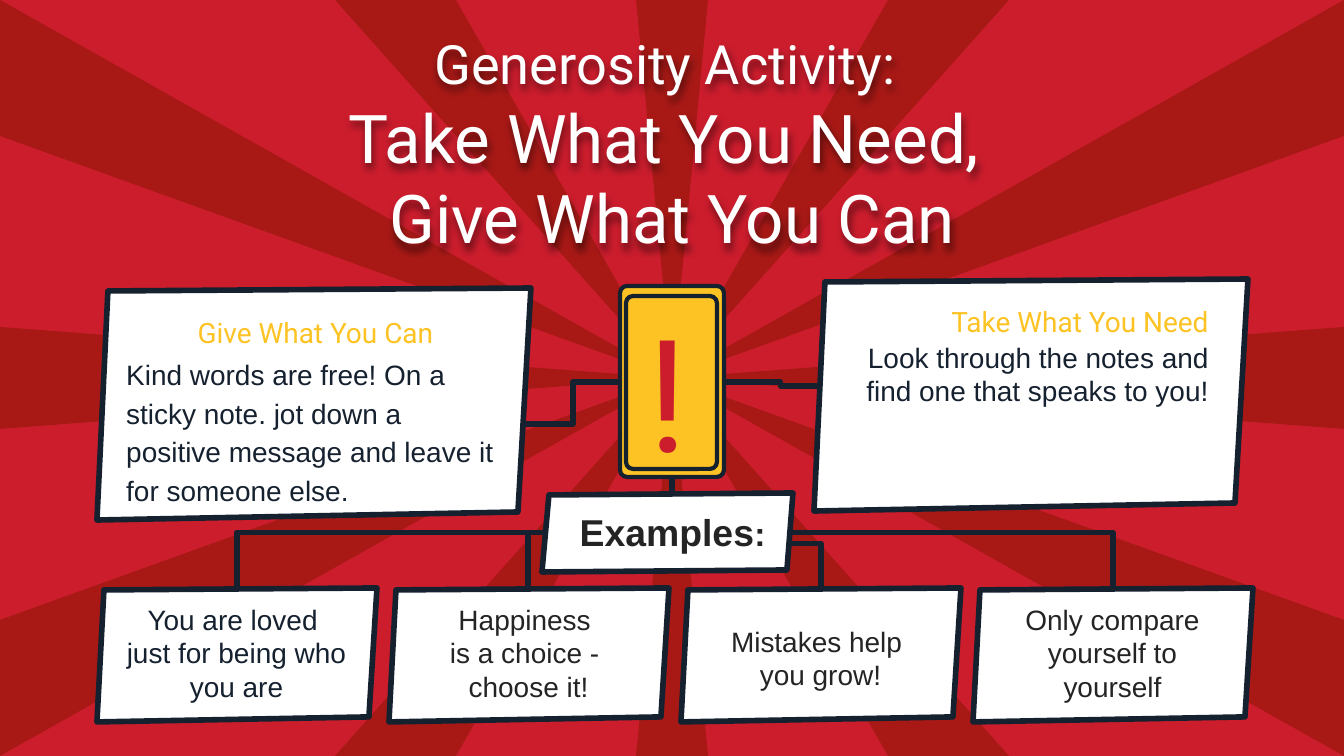
from lxml.etree import SubElement
from pptx import Presentation
from pptx.dml.color import RGBColor
from pptx.enum.shapes import MSO_CONNECTOR, MSO_SHAPE
from pptx.enum.text import MSO_ANCHOR, PP_ALIGN
from pptx.oxml.ns import qn
from pptx.util import Pt

RED = RGBColor(0xCC, 0x1D, 0x2D)
DARK_RED = RGBColor(0xA8, 0x19, 0x16)
NAVY = RGBColor(0x16, 0x21, 0x30)
GRAY = RGBColor(0x24, 0x24, 0x24)
YELLOW = RGBColor(0xFD, 0xC3, 0x24)
WHITE = RGBColor(0xFF, 0xFF, 0xFF)

EMU_PER_PX = 914400 / 134.4
WIDTH, HEIGHT = 1344, 756
CENTER = (WIDTH // 2, HEIGHT // 2)

RAYS = [
    ((-36, -378), (36, -378)),
    ((-337, -378), (-216, -378)),
    ((216, -378), (337, -378)),
    ((-672, -378), (-672, -242)),
    ((672, -378), (672, -242)),
    ((-672, -51), (-672, 51)),
]

TITLE = [[("Generosity Activity:", 29), (" \n", 32),
          ("Take What You Need, \nGive What You Can", 36)]]

LARGE_PANEL = [(11, 3), (434, 0), (421, 224), (0, 232)]
SMALL_PANEL = [(7, 2), (280, 0), (272, 129), (0, 134)]
HEADING_PANEL = [(7, 2), (251, 0), (245, 77), (0, 79)]

INSTRUCTIONS = [
    {
        "panel": (97, 288),
        "heading": ("Give What You Can", (122, 297, 387, 54), PP_ALIGN.CENTER),
        "body": ("Kind words are free! On a sticky note. jot down a positive message "
                 "and leave it for someone else.", (113, 339, 403, 171), PP_ALIGN.LEFT, 1.15),
    },
    {
        "panel": (814, 279),
        "heading": ("Take What You Need", (835, 286, 387, 54), PP_ALIGN.RIGHT),
        "body": ("Look through the notes and find one that speaks to you!",
                 (847, 327, 375, 118), PP_ALIGN.RIGHT, 1),
    },
]

EXAMPLES = [
    (["You are loved \njust for being who you are"], 589, NAVY),
    (["Happiness \nis a choice - \nchoose it!"], 589, GRAY),
    (["Mistakes help ", "you grow!"], 611, GRAY),
    (["Only compare yourself to yourself"], 589, GRAY),
]
EXAMPLE_LEFT, EXAMPLE_TOP, EXAMPLE_PITCH = 97, 588, 292

SIGN_BOTTOM = (672, 477)
SIDE_LINKS = [((714, 382), (847, 386)), ((630, 382), (516, 424))]
EXAMPLE_LINKS = [(237, 588), (1113, 588), (528, 588), (821, 610)]

SIGN_PLATES = [((620, 286, 104, 191), YELLOW), ((626, 296, 91, 173), None)]
SIGN_RADIUS = 7


def emu(pixels):
    return round(pixels * EMU_PER_PX)


def style_shape(shape, fill, line_width=None):
    shape.shadow.inherit = False
    if fill is None:
        shape.fill.background()
    else:
        shape.fill.solid()
        shape.fill.fore_color.rgb = fill
    if line_width is None:
        shape.line.fill.background()
    else:
        shape.line.color.rgb = NAVY
        shape.line.width = Pt(line_width)


def add_polygon(slide, origin, offsets, fill, line_width=None):
    points = [(origin[0] + x, origin[1] + y) for x, y in offsets]
    builder = slide.shapes.build_freeform(*points[0], scale=EMU_PER_PX)
    builder.add_line_segments(points[1:], close=True)
    style_shape(builder.convert_to_shape(), fill, line_width)


def add_elbow(slide, start, end, vertical=False):
    (x1, y1), (x2, y2) = start, end
    if vertical:
        middle_x, middle_y = (x1 + x2) / 2, (y1 + y2) / 2
        half_width, half_height = abs(y2 - y1) / 2, abs(x2 - x1) / 2
        side = 1 if x2 < x1 else -1
        x1, x2 = middle_x - side * half_width, middle_x + side * half_width
        y1, y2 = middle_y - half_height, middle_y + half_height
    connector = slide.shapes.add_connector(
        MSO_CONNECTOR.ELBOW, emu(x1), emu(y1), emu(x2), emu(y2))
    properties = connector._element.spPr
    if vertical:
        properties.find(qn("a:xfrm")).set("rot", str((90 if side == 1 else 270) * 60000))
    connector.line.color.rgb = NAVY
    connector.line.width = Pt(3)
    SubElement(properties, qn("a:effectLst"))


def add_text(slide, box, paragraphs, size=15, font="Arial", color=NAVY, bold=False,
             align=PP_ALIGN.CENTER, spacing=1):
    shape = slide.shapes.add_textbox(*map(emu, box))
    frame = shape.text_frame
    frame.word_wrap = True
    frame.vertical_anchor = MSO_ANCHOR.TOP
    frame.margin_left = frame.margin_right = frame.margin_top = frame.margin_bottom = Pt(7.2)
    for index, runs in enumerate(paragraphs):
        paragraph = frame.paragraphs[0] if index == 0 else frame.add_paragraph()
        paragraph.alignment = align
        paragraph.line_spacing = spacing
        for text, run_size in [(runs, size)] if isinstance(runs, str) else runs:
            for part, line in enumerate(text.split("\n")):
                if part:
                    paragraph.add_line_break()
                if line:
                    run = paragraph.add_run()
                    run.text = line
                    run.font.size = Pt(run_size)
                    run.font.name = font
                    run.font.bold = bold
                    run.font.color.rgb = color
    return shape


def add_soft_shadow(shape):
    effects = SubElement(shape._element.spPr, qn("a:effectLst"))
    shadow = SubElement(effects, qn("a:outerShdw"), blurRad="50800", dist="38100",
                        dir="5400000", algn="t", rotWithShape="0")
    color = SubElement(shadow, qn("a:srgbClr"), val="000000")
    SubElement(color, qn("a:alpha"), val="50000")


def main():
    presentation = Presentation()
    presentation.slide_width, presentation.slide_height = emu(WIDTH), emu(HEIGHT)
    slide = presentation.slides.add_slide(presentation.slide_layouts[6])
    slide.background.fill.solid()
    slide.background.fill.fore_color.rgb = RED

    for ray in RAYS:
        for sign in (1, -1):
            edge = [(sign * x, sign * y) for x, y in ray]
            add_polygon(slide, CENTER, [(0, 0), *edge], DARK_RED)

    for start, end in SIDE_LINKS:
        add_elbow(slide, start, end)
    for end in EXAMPLE_LINKS:
        add_elbow(slide, SIGN_BOTTOM, end, vertical=True)

    add_soft_shadow(add_text(slide, (94, 11, 1157, 138), TITLE, font="Roboto", color=WHITE))

    for instruction in INSTRUCTIONS:
        add_polygon(slide, instruction["panel"], LARGE_PANEL, WHITE, 3)
        text, box, align = instruction["heading"]
        add_text(slide, box, [text], font="Roboto", color=YELLOW, align=align, spacing=1.15)
        text, box, align, spacing = instruction["body"]
        add_text(slide, box, [text], align=align, spacing=spacing)

    for (left, top, width, height), fill in SIGN_PLATES:
        plate = slide.shapes.add_shape(
            MSO_SHAPE.ROUNDED_RECTANGLE, emu(left), emu(top), emu(width), emu(height))
        plate.adjustments[0] = SIGN_RADIUS / width
        style_shape(plate, fill, 2.25)
    add_text(slide, (634, 282, 53, 218), ["!"], size=84, font="Roboto", color=RED,
             align=PP_ALIGN.LEFT)

    for index, (paragraphs, text_top, color) in enumerate(EXAMPLES):
        left = EXAMPLE_LEFT + index * EXAMPLE_PITCH
        add_polygon(slide, (left, EXAMPLE_TOP), SMALL_PANEL, WHITE, 3)
        add_text(slide, (left + 9, text_top, 261, 89), paragraphs, color=color)

    add_polygon(slide, (542, 493), HEADING_PANEL, WHITE, 3)
    add_text(slide, (542, 496, 261, 52), [[("Examples", 20), (":", 18)]], color=GRAY, bold=True)

    presentation.save("out.pptx")


if __name__ == "__main__":
    main()
